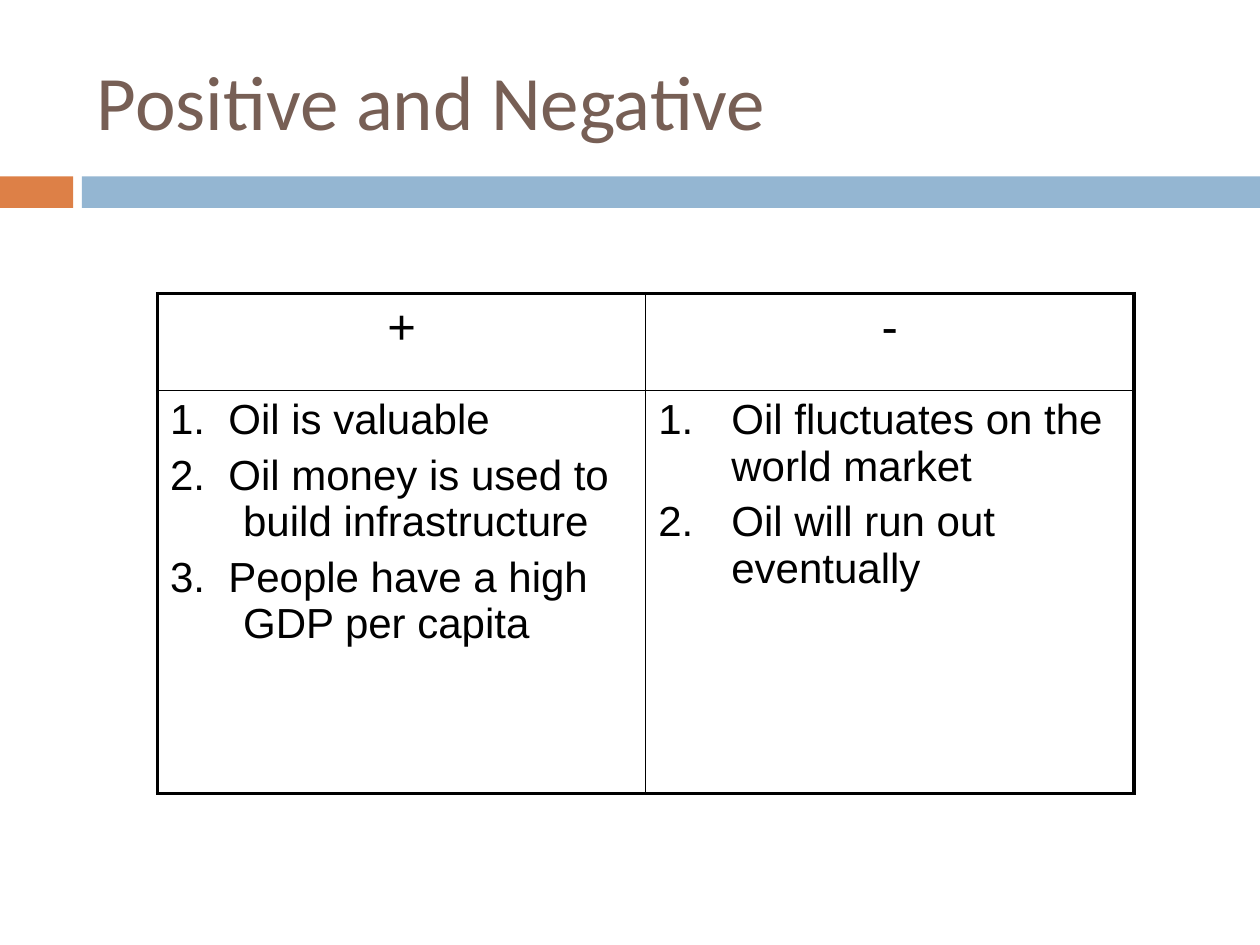
from dataclasses import dataclass

from lxml.etree import SubElement
from pptx import Presentation
from pptx.dml.color import RGBColor
from pptx.enum.shapes import MSO_SHAPE
from pptx.enum.text import MSO_ANCHOR, PP_ALIGN
from pptx.oxml import parse_xml
from pptx.oxml.ns import nsdecls, qn
from pptx.util import Inches, Pt


@dataclass(frozen=True)
class Theme:
    title_font: str = "Calibri"
    table_font: str = "Arial"
    title_color: str = "775F55"
    text_color: str = "000000"
    accent: str = "DD8047"
    band: str = "94B6D2"
    title_size: int = 44
    heading_size: int = 28
    body_size: int = 24
    outer_line: float = 2.25
    inner_line: float = 1


@dataclass(frozen=True)
class Bar:
    left: float
    width: float
    color: str


@dataclass(frozen=True)
class Column:
    heading: str
    points: tuple[str, ...]
    auto_numbered: bool


THEME = Theme()
BARS = (Bar(0, 0.58, THEME.accent), Bar(0.65, 9.35, THEME.band))
COLUMNS = (
    Column("+", (
        "1.  Oil is valuable",
        "2.  Oil money is used to build infrastructure",
        "3.  People have a high GDP per capita",
    ), False),
    Column("-", (
        "Oil fluctuates on the world market",
        "Oil will run out eventually",
    ), True),
)
ROW_HEIGHTS = (0.77, 3.2)
HANGING_INDENT = 0.58


def style_font(font, name: str, size: float, color: str) -> None:
    font.name = name
    font.size = Pt(size)
    font.color.rgb = RGBColor.from_string(color)


def add_bar(page, bar: Bar) -> None:
    shape = page.shapes.add_shape(
        MSO_SHAPE.RECTANGLE, Inches(bar.left), Inches(1.4), Inches(bar.width), Inches(0.25)
    )
    shape.shadow.inherit = False
    shape.fill.solid()
    shape.fill.fore_color.rgb = RGBColor.from_string(bar.color)
    shape.line.fill.background()


def add_title(page, text: str) -> None:
    box = page.shapes.add_textbox(Inches(0.67), Inches(0.25), Inches(8.92), Inches(1.08))
    frame = box.text_frame
    frame.word_wrap = True
    frame.vertical_anchor = MSO_ANCHOR.MIDDLE
    frame.text = text
    span = frame.paragraphs[0].runs[0]
    style_font(span.font, THEME.title_font, THEME.title_size, THEME.title_color)


def set_borders(cell, outer_sides: set[str]) -> None:
    properties = cell._tc.get_or_add_tcPr()
    for position, side in enumerate("LRTB"):
        points = THEME.outer_line if side in outer_sides else THEME.inner_line
        properties.insert(position, parse_xml(
            f'<a:ln{side} {nsdecls("a")} w="{Pt(points)}"><a:solidFill>'
            f'<a:srgbClr val="{THEME.text_color}"/></a:solidFill></a:ln{side}>'
        ))


def fill_cell(cell, lines: tuple[str, ...], size: int) -> None:
    cell.fill.background()
    frame = cell.text_frame
    frame.text = "\n".join(lines)
    for index, paragraph in enumerate(frame.paragraphs):
        if index:
            paragraph.space_before = Pt(size * 0.2)
        for span in paragraph.runs:
            style_font(span.font, THEME.table_font, size, THEME.text_color)


def set_hanging_indent(paragraph, auto_numbered: bool) -> None:
    properties = paragraph._p.get_or_add_pPr()
    properties.set("marL", str(Inches(HANGING_INDENT)))
    properties.set("indent", str(-Inches(HANGING_INDENT)))
    if auto_numbered:
        SubElement(properties, qn("a:buFontTx"))
        SubElement(properties, qn("a:buAutoNum"), type="arabicPeriod")
    else:
        SubElement(properties, qn("a:buNone"))


def add_comparison(page, columns: tuple[Column, ...]) -> None:
    table = page.shapes.add_table(
        len(ROW_HEIGHTS), len(columns),
        Inches(1.25), Inches(2.33), Inches(7.75), Inches(sum(ROW_HEIGHTS)),
    ).table
    table.first_row = False
    table.horz_banding = False
    for row, height in zip(table.rows, ROW_HEIGHTS):
        row.height = Inches(height)
    for index, column in enumerate(columns):
        heading, body = table.cell(0, index), table.cell(1, index)
        fill_cell(heading, (column.heading,), THEME.heading_size)
        heading.text_frame.paragraphs[0].alignment = PP_ALIGN.CENTER
        fill_cell(body, column.points, THEME.body_size)
        for paragraph in body.text_frame.paragraphs:
            set_hanging_indent(paragraph, column.auto_numbered)
        outer_side = "L" if index == 0 else "R"
        set_borders(heading, {outer_side, "T"})
        set_borders(body, {outer_side, "B"})


def main() -> None:
    deck = Presentation()
    deck.slide_width = Inches(10)
    deck.slide_height = Inches(7.5)
    page = deck.slides.add_slide(deck.slide_layouts[6])
    for bar in BARS:
        add_bar(page, bar)
    add_title(page, "Positive and Negative")
    add_comparison(page, COLUMNS)
    deck.save("out.pptx")


if __name__ == "__main__":
    main()
